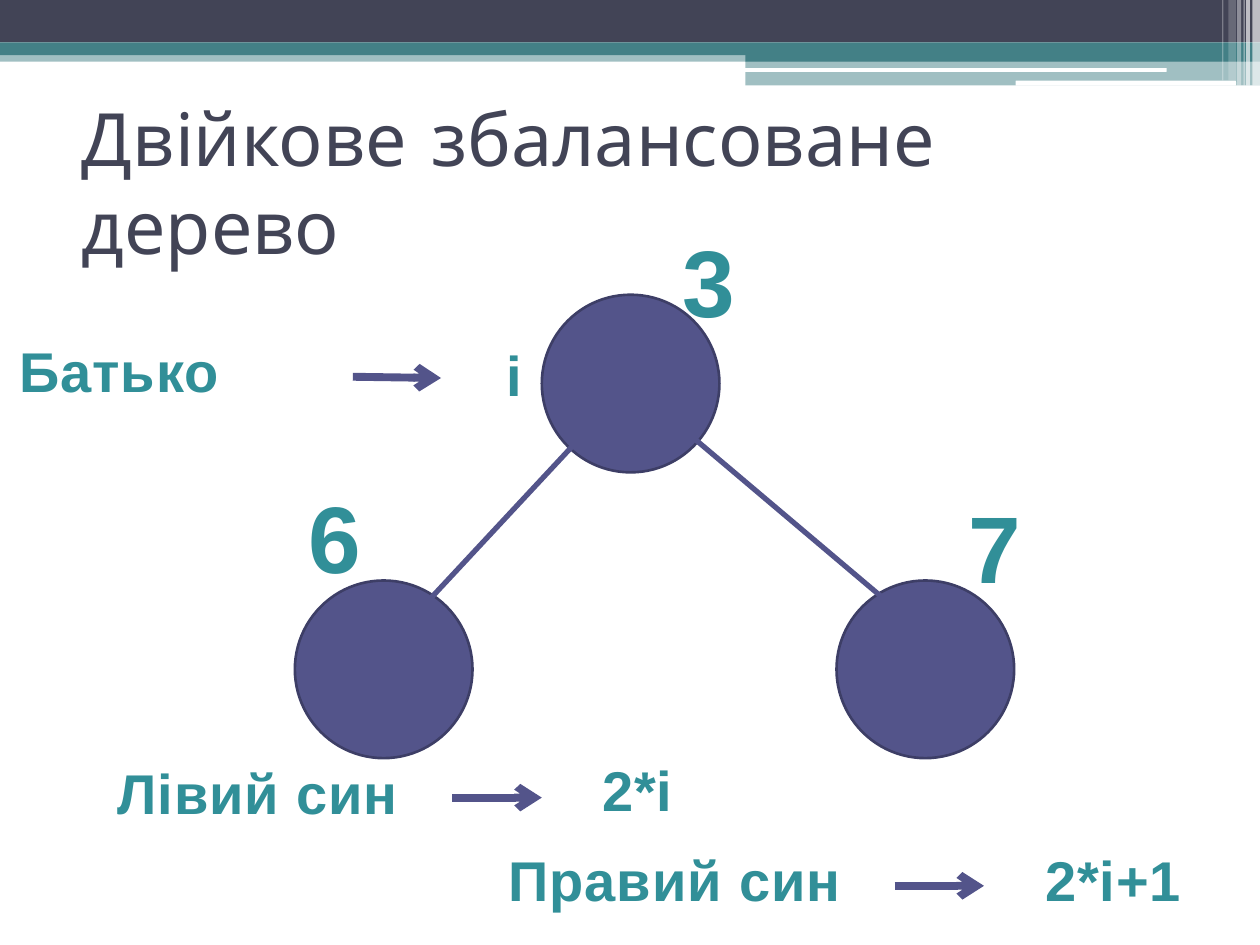
from pptx import Presentation
from pptx.dml.color import RGBColor
from pptx.enum.shapes import MSO_CONNECTOR as Connector, MSO_SHAPE as Shape
from pptx.enum.text import MSO_ANCHOR as Anchor, PP_ALIGN as Align
from pptx.oxml.ns import qn
from pptx.util import Pt
from lxml.etree import SubElement

DARK = RGBColor(0x42, 0x44, 0x56)
TEAL = RGBColor(0x43, 0x80, 0x86)
WHITE = RGBColor(0xFF, 0xFF, 0xFF)
VIOLET = RGBColor(0x53, 0x54, 0x8A)
OUTLINE = RGBColor(0x3D, 0x3E, 0x66)
LABEL_STOPS = [
    (0.25, RGBColor(0x31, 0x8F, 0x98)),
    (1, RGBColor(0x20, 0x67, 0x6E)),
]

LABEL_FONT = {"name": "Arial", "bold": True}
TITLE_FONT = {"name": "Comic Neue", "size": Pt(42), "bold": False}
NODE_SIZE = 101.5

BANDS = [
    (0, 28.8, 720, 6.5, TEAL, 50),
    (0, 0, 720, 24.3, DARK, 100),
    (0, 24.3, 720, 7.2, TEAL, 100),
    (426, 28.1, 294, 7.2, TEAL, 100),
    (426, 35, 294, 13.8, TEAL, 50),
]
WHITE_BARS = [(425.5, 38.9, 241.2, 2.2), (580.3, 46.1, 126, 2.9)]
STRIPES = [
    (715.7, 4.3, 49, 65),
    (712.1, 2.2, 49, 65),
    (710.6, 0.7, 49, 60),
    (707, 2.2, 49, 40),
    (702, 4.3, 46, 20),
    (698.4, 0.7, 46, 30),
]
NODES = [(309.6, 168.4), (168.5, 331.7), (478, 331.7)]
INDEXES = [("3", 382.3, 123.8), ("6", 168.5, 270), ("7", 545.8, 275.8)]
EDGES = [(360, 219.6, 213.8, 376.6), (360, 219.6, 545.8, 376.6)]
ARROWS = [
    (258.5, 455.8, 309.6, 455.8),
    (511.2, 506.2, 562.3, 506.2),
    (201.6, 215.3, 252, 216),
]
LABELS = [
    ("Лівий син", -30.2, 429.8, 355),
    ("Правий син", 230, 479.5, 311),
    ("i", 259.9, 190.8, 68.4),
    ("2*i", 309.6, 428.4, 109.4),
    ("2*i+1", 570.2, 479.5, 131.8),
]


def set_values(target, values):
    for name, value in values.items():
        setattr(target, name, value)


def add_block(slide, kind, box, color, opacity=100):
    shape = slide.shapes.add_shape(kind, *map(Pt, box))
    shape.shadow.inherit = False
    shape.fill.solid()
    shape.fill.fore_color.rgb = color
    shape.line.fill.background()
    if opacity < 100:
        color_element = next(shape.element.spPr.iter(qn("a:srgbClr")))
        SubElement(color_element, qn("a:alpha"), val=str(opacity * 1000))
    return shape


def add_header(slide):
    for *box, color, opacity in BANDS:
        add_block(slide, Shape.RECTANGLE, box, color, opacity)
    for box in WHITE_BARS:
        add_block(slide, Shape.ROUNDED_RECTANGLE, box, WHITE)
    for left, width, height, opacity in STRIPES:
        add_block(slide, Shape.RECTANGLE, (left, 0, width, height), WHITE, opacity)


def add_title(slide, text):
    title = slide.shapes.title
    set_values(title, {
        "left": Pt(39.6), "top": Pt(50.4), "width": Pt(652.3), "height": Pt(106.6),
    })
    frame = title.text_frame
    set_values(frame, {"text": text, "vertical_anchor": Anchor.MIDDLE, "word_wrap": True})
    paragraph = frame.paragraphs[0]
    paragraph.alignment = Align.LEFT
    font = paragraph.runs[0].font
    set_values(font, TITLE_FONT)
    font.color.rgb = DARK


def add_node(slide, left, top):
    node = add_block(slide, Shape.OVAL, (left, top, NODE_SIZE, NODE_SIZE), VIOLET)
    node.line.color.rgb = OUTLINE
    node.line.width = Pt(1.5)


def add_label(slide, text, left, top, width, height=46, size=32, align=Align.CENTER):
    label = slide.shapes.add_textbox(*map(Pt, (left, top, width, height)))
    frame = label.text_frame
    frame.word_wrap = True
    paragraph = frame.paragraphs[0]
    paragraph.alignment = align
    run = paragraph.add_run()
    run.text = text
    set_values(run.font, {**LABEL_FONT, "size": Pt(size)})
    fill = run.font.fill
    fill.gradient()
    fill.gradient_angle = 270
    for stop, (position, color) in zip(fill.gradient_stops, LABEL_STOPS):
        stop.position = position
        stop.color.rgb = color
    next(label.element.iter(qn("a:rPr"))).set("spc", "50")
    return label


def add_line(slide, points, width, arrow=False):
    connector = slide.shapes.add_connector(Connector.STRAIGHT, *map(Pt, points))
    connector.line.color.rgb = VIOLET
    connector.line.width = Pt(width)
    properties = connector.element.spPr
    if arrow:
        SubElement(properties.find(qn("a:ln")), qn("a:tailEnd"), type="arrow")
    SubElement(properties, qn("a:effectLst"))


def main():
    presentation = Presentation()
    set_values(presentation, {"slide_width": Pt(720), "slide_height": Pt(540)})
    slide = presentation.slides.add_slide(presentation.slide_layouts[5])
    add_header(slide)
    add_title(slide, "Двійкове збалансоване дерево")
    for left, top in NODES:
        add_node(slide, left, top)
    for text, left, top in INDEXES:
        add_label(slide, text, left, top, 45.4, 72.7, 54)
    for points in EDGES:
        add_line(slide, points, 3)
    for label in LABELS:
        add_label(slide, *label)
    father = add_label(slide, "Батько", 0, 188.6, 226, align=Align.LEFT)
    father.text_frame.margin_left = Pt(11)
    for points in ARROWS:
        add_line(slide, points, 4.5, arrow=True)
    presentation.save("out.pptx")


if __name__ == "__main__":
    main()
